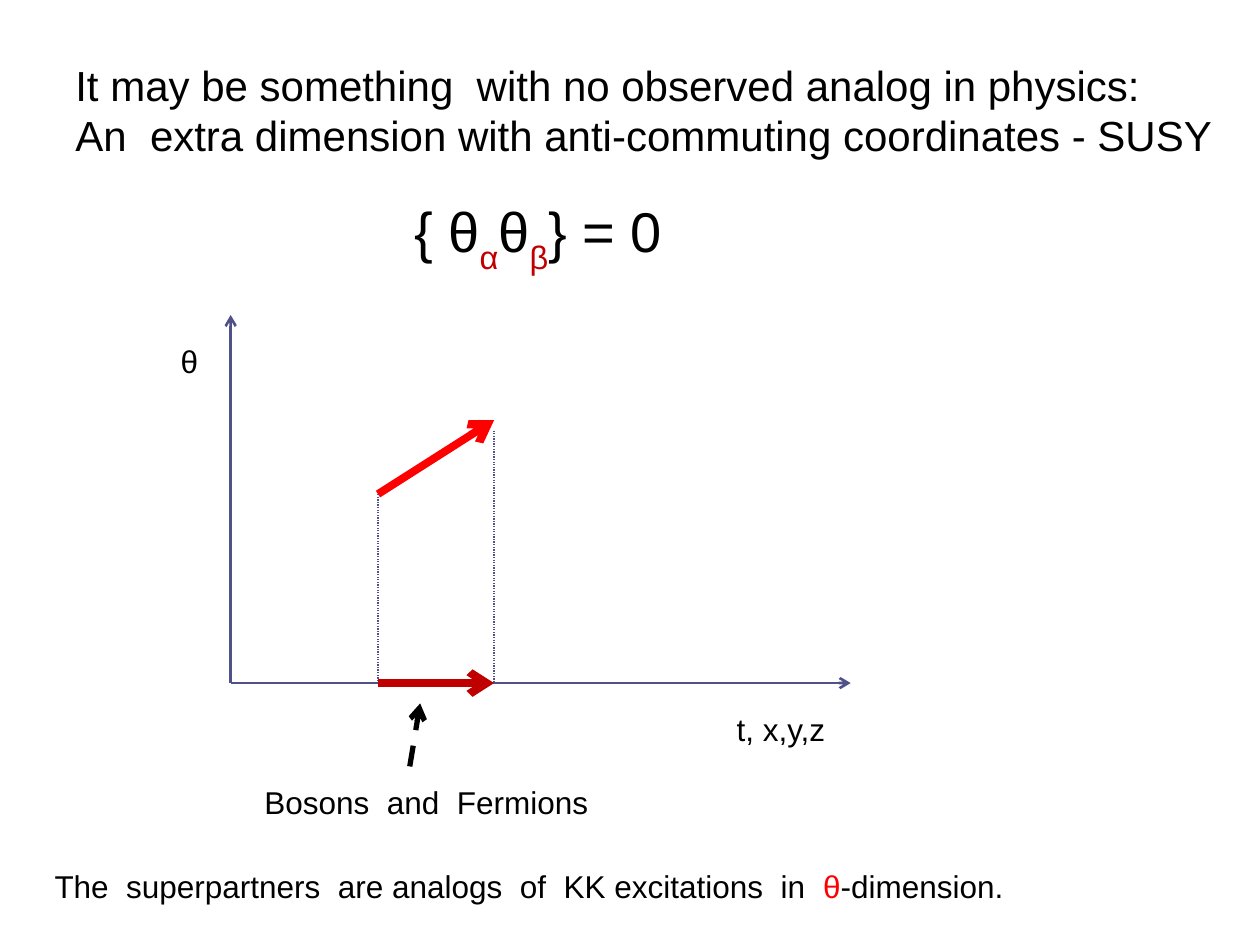
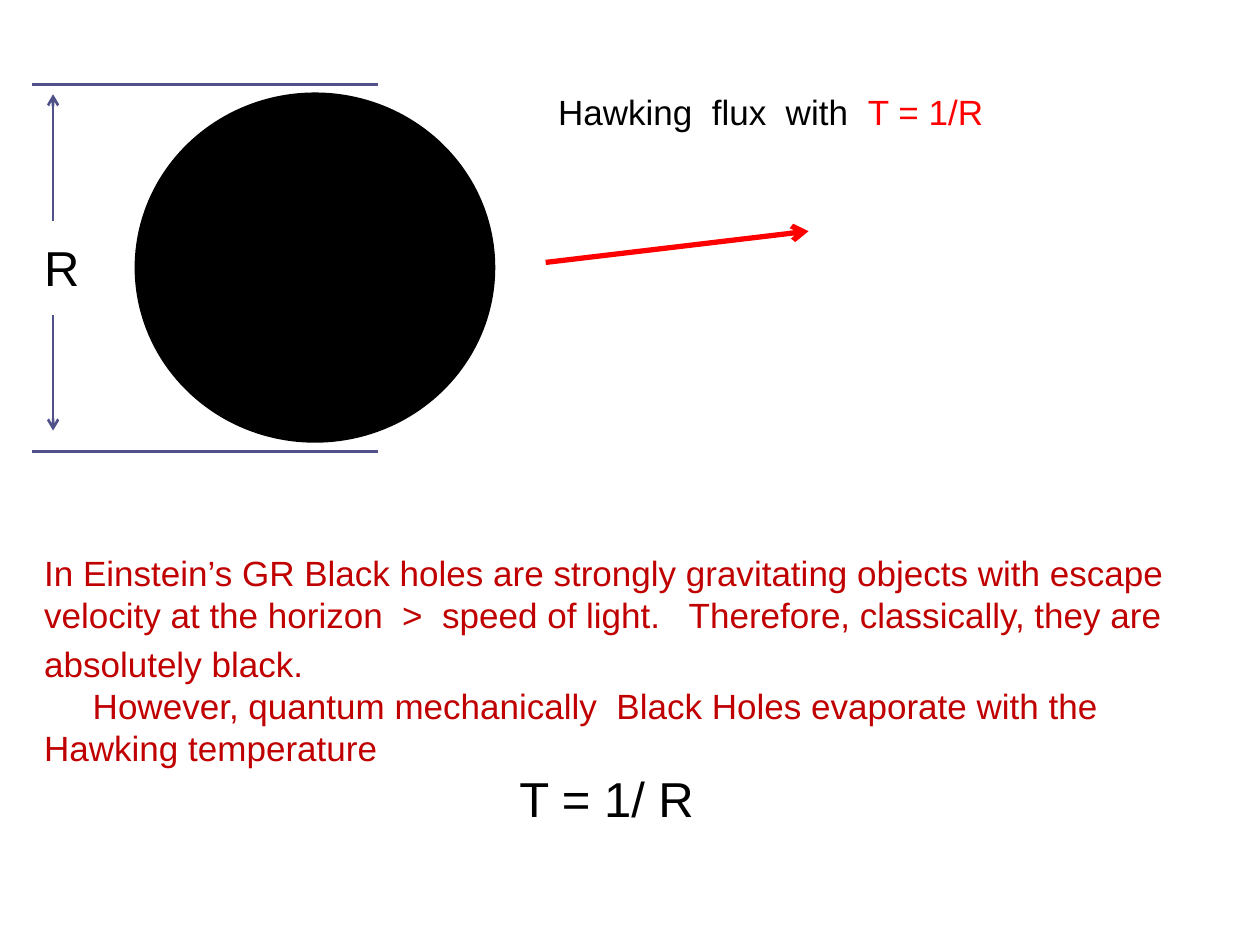
"""Builds two physics slides: an anti-commuting extra dimension and Hawking flux."""
from lxml import etree
from pptx import Presentation
from pptx import util as u
from pptx.dml.color import RGBColor
from pptx.enum import dml, shapes
from pptx.oxml.ns import qn

INK, AXIS, RED, DEEP = "000000", "505188", "FF0000", "C00000"
FONT = "Arial"
DOT, DASH = dml.MSO_LINE.ROUND_DOT, dml.MSO_LINE.DASH

LEFT, BASE = 4.65, 13.77
START, END = 7.62, 9.96
RIM, FLOOR, EDGE, SPAN = 1.7, 9.1, 0.64, 7.62
MARK = 1.07

SUSY = [
    ("text", (1.27, 1.07, 23.5, 5.2), [
        {"runs": [("It may be something  with no observed analog in physics:",)]},
        {"runs": [("An  extra dimension with anti-commuting coordinates - SUSY",)]},
        {"runs": [("{ θ",), ("α", DEEP, -30), ("θ",), ("β", DEEP, -30), ("} = 0",)],
         "size": 32, "indent": 6.83, "gap": 21},
    ], {"size": 24}),
    ("line", (LEFT, BASE), (17.15, BASE), {"tip": True}),
    ("line", (LEFT, BASE), (LEFT, 6.35), {"tip": True}),
    ("text", (3.39, 6.77, 0.88, 1.02), [{"runs": [("θ",)]}], {}),
    ("text", (14.6, 14.18, 6.77, 1.02), [{"runs": [("t, x,y,z",)]}], {}),
    ("line", (START, END), (END, 8.47), {"color": RED, "width": 4.5, "tip": True}),
    ("line", (START, END), (START, BASE), {"width": 0.75, "dash": DOT}),
    ("line", (END, 8.68), (END, BASE), {"width": 0.75, "dash": DOT}),
    ("line", (START, BASE), (END, BASE), {"color": DEEP, "width": 4.5, "tip": True}),
    ("text", (5.08, 15.66, 7.3, 1.02), [{"runs": [("Bosons  and  Fermions",)]}], {}),
    ("line", (8.26, 15.45), (8.47, 14.18),
     {"color": INK, "width": 3, "dash": DASH, "tip": True}),
    ("text", (0.85, 17.36, 20.57, 1.02), [
        {"runs": [("The  superpartners  are analogs  of  KK excitations  in  ",),
                  ("θ", RED), ("-dimension.",)]},
    ], {}),
]

HAWKING = [
    ("line", (11, 5.29), (16.3, 4.66), {"color": RED, "width": 3, "tip": True}),
    ("text", (11, 1.7, 9.32, 1.12),
     [{"runs": [("Hawking  flux  with  ",), ("T = 1/R", RED)]}], {"size": 20}),
    ("text", (EDGE, 11, 23.45, 7.44), [
        {"runs": [("In Einstein’s GR Black holes are strongly gravitating objects with escape",)]},
        {"runs": [("velocity at the horizon  >  speed of light.   Therefore, classically, they are",)]},
        {"runs": [("absolutely black.",)], "gap": 4},
        {"runs": [("However, quantum mechanically  Black Holes evaporate with the",)],
         "indent": 0.98},
        {"runs": [("Hawking temperature",)]},
        {"runs": [("T = 1/ R",)], "size": 28, "color": INK, "indent": 9.58},
    ], {"size": 20, "color": DEEP}),
    ("disc", (2.75, 1.9, 7.2, 6.99), {"color": INK, "width": 2}),
    ("line", (MARK, 6.35), (MARK, 8.68), {"tip": True}),
    ("line", (MARK, 4.45), (MARK, 1.9), {"tip": True}),
    ("line", (EDGE, RIM), (SPAN, RIM), {}),
    ("line", (EDGE, FLOOR), (SPAN, FLOOR), {}),
    ("text", (EDGE, 4.66, 1.48, 1.45), [{"runs": [("R",)]}], {"size": 28}),
]


def cms(vals):
    return [u.Cm(val) for val in vals]


def rgb(code):
    return RGBColor.from_string(code)


def add_text(slide, box, paras, size=18, color=INK):
    frame = slide.shapes.add_textbox(*cms(box)).text_frame
    frame.word_wrap = True
    for num, item in enumerate(paras):
        para = frame.add_paragraph() if num else frame.paragraphs[0]
        para.space_before = u.Pt(item.get("gap", 0))
        if "indent" in item:
            props = para._p.get_or_add_pPr()
            props.set("marL", str(u.Cm(item["indent"])))
            props.set("indent", "0")
        for words, tint, shift in (tuple(run) + (None, 0)[len(run) - 1:] for run in item["runs"]):
            run = para.add_run()
            run.text = words
            run.font.name = FONT
            run.font.size = u.Pt(item.get("size", size))
            run.font.color.rgb = rgb(tint or item.get("color", color))
            if shift:
                run.font._element.set("baseline", str(shift * 1000))


def add_line(slide, start, end, color=AXIS, width=1.5, dash=None, tip=False):
    link = slide.shapes.add_connector(shapes.MSO_CONNECTOR.STRAIGHT, *cms(start + end))
    link.line.color.rgb = rgb(color)
    link.line.width = u.Pt(width)
    if dash:
        link.line.dash_style = dash
    props = link._element.spPr
    if tip:
        etree.SubElement(props.find(qn("a:ln")), qn("a:tailEnd"), type="arrow")
    etree.SubElement(props, qn("a:effectLst"))


def add_disc(slide, box, color, width):
    disc = slide.shapes.add_shape(shapes.MSO_SHAPE.OVAL, *cms(box))
    disc.shadow.inherit = False
    disc.fill.solid()
    disc.fill.fore_color.rgb = rgb(color)
    disc.line.color.rgb = rgb(color)
    disc.line.width = u.Pt(width)


def main():
    deck = Presentation()
    deck.slide_width, deck.slide_height = cms((25.4, 19.05))
    draw = {"text": add_text, "line": add_line, "disc": add_disc}
    for parts in (SUSY, HAWKING):
        slide = deck.slides.add_slide(deck.slide_layouts[6])
        for kind, *args, style in parts:
            draw[kind](slide, *args, **style)
    deck.save("out.pptx")


if __name__ == "__main__":
    main()
